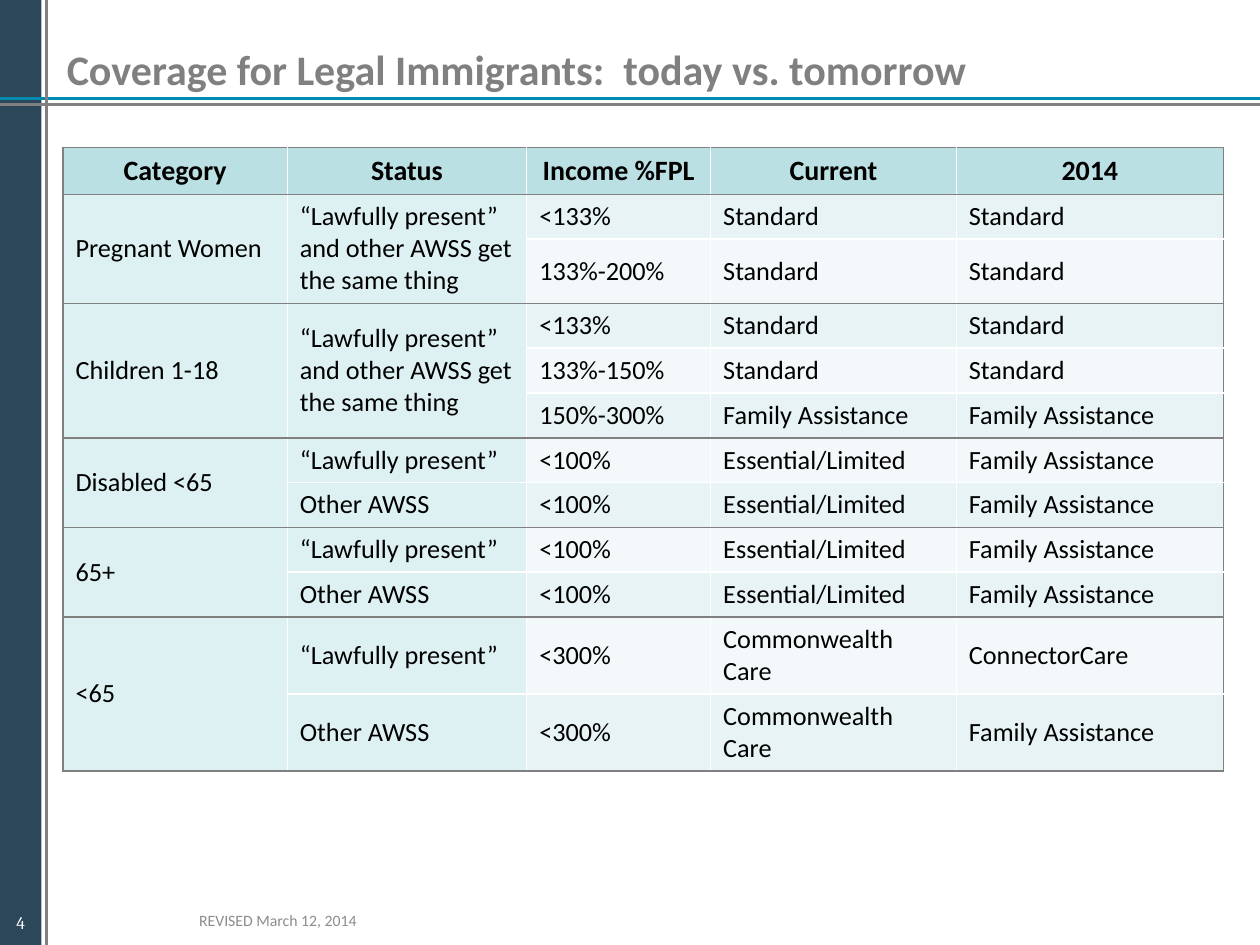
from lxml import etree
from pptx import Presentation
from pptx.dml.color import RGBColor
from pptx.enum.shapes import MSO_CONNECTOR, MSO_SHAPE
from pptx.enum.text import MSO_ANCHOR as ANCHOR, PP_ALIGN as ALIGN
from pptx.oxml.ns import qn
from pptx.util import Inches, Pt

WHITE = RGBColor(0xFF, 0xFF, 0xFF)
BLACK = RGBColor(0x00, 0x00, 0x00)
GRAY = RGBColor(0x80, 0x80, 0x80)
FOOTER_GRAY = RGBColor(0x8C, 0x8C, 0x8C)
NAVY = RGBColor(0x2C, 0x46, 0x5A)
TEAL = RGBColor(0x00, 0x8A, 0xB0)
HEADER_FILL = RGBColor(0xBB, 0xE0, 0xE3)
LABEL_FILL = RGBColor(0xDE, 0xF1, 0xF2)
BAND_FILLS = (RGBColor(0xF3, 0xF9, 0xFA), RGBColor(0xE7, 0xF3, 0xF4))

COL_WIDTHS = (1.78, 1.9, 1.46, 1.95, 2.12)
ROW_HEIGHTS = (0.35, 0.35, 0.47, *[0.35] * 7, 0.5, 0.5)
HEADERS = ("Category", "Status", "Income %FPL", "Current", "2014")
LAWFUL, OTHER = "“Lawfully present”", "Other AWSS"
FAMILY, LIMITED, CARE = "Family Assistance", "Essential/Limited", "Commonwealth Care"
GROUPS = (
    ("Pregnant Women", (
        (LAWFUL + " and other AWSS get the same thing", "<133%", "Standard", "Standard"),
        (None, "133%-200%", "Standard", "Standard"))),
    ("Children 1-18", (
        (LAWFUL + "\nand other AWSS get the same thing", "<133%", "Standard", "Standard"),
        (None, "133%-150%", "Standard", "Standard"),
        (None, "150%-300%", FAMILY, FAMILY))),
    ("Disabled <65", (
        (LAWFUL, "<100%", LIMITED, FAMILY),
        (OTHER, "<100%", LIMITED, FAMILY))),
    ("65+", (
        (LAWFUL, "<100%", LIMITED, FAMILY),
        (OTHER, "<100%", LIMITED, FAMILY))),
    ("<65", (
        (LAWFUL, "<300%", CARE, "ConnectorCare"),
        (OTHER, "<300%", CARE, FAMILY))),
)


def write(tf, text, size=15, color=BLACK, bold=False, font="Calibri", align=ALIGN.LEFT):
    """Fill a text frame with one paragraph per line of text."""
    for i, line in enumerate(text.split("\n")):
        p = tf.add_paragraph() if i else tf.paragraphs[0]
        p.alignment = align
        r = p.add_run()
        r.text = line
        r.font.name, r.font.size, r.font.bold = font, Pt(size), bold
        r.font.color.rgb = color


def add_text(s, box, text, wrap=True, inset=None, **fmt):
    """Add a vertically centred text box."""
    tf = s.shapes.add_textbox(*map(Inches, box)).text_frame
    tf.word_wrap = wrap
    tf.vertical_anchor = ANCHOR.MIDDLE
    if inset is not None:
        tf.margin_left = tf.margin_top = tf.margin_right = tf.margin_bottom = Inches(inset)
    write(tf, text, **fmt)


def add_bar(s, box, color):
    """Add a plain filled rectangle."""
    sp = s.shapes.add_shape(MSO_SHAPE.RECTANGLE, *map(Inches, box))
    sp.shadow.inherit = False
    sp.fill.solid()
    sp.fill.fore_color.rgb = color
    sp.line.fill.background()


def add_rule(s, ends, color):
    """Add a straight line without a shadow."""
    sp = s.shapes.add_connector(MSO_CONNECTOR.STRAIGHT, *map(Inches, ends))
    sp.line.color.rgb = color
    sp.line.width = Pt(1.5)
    etree.SubElement(sp._element.spPr, qn("a:effectLst"))


def add_title(s, text):
    """Place and format the title placeholder."""
    sp = s.shapes.title
    sp.left, sp.top, sp.width, sp.height = map(Inches, (0.43, 0.21, 9.57, 0.67))
    sp.text_frame.vertical_anchor = ANCHOR.MIDDLE
    write(sp.text_frame, text, size=24, color=GRAY, bold=True)


def set_borders(cell, **sides):
    """Draw one-point cell borders, given as side=color."""
    tc_pr = cell._tc.get_or_add_tcPr()
    for side, color in sides.items():
        ln = etree.SubElement(tc_pr, qn("a:ln" + side), w=str(Pt(1)))
        fill = etree.SubElement(ln, qn("a:solidFill"))
        etree.SubElement(fill, qn("a:srgbClr"), val=str(color))


def style_cell(cell, fill, edges):
    """Set borders, fill and anchor; edges names the grey sides."""
    set_borders(cell, **{side: GRAY if side in edges else WHITE for side in "LRTB"})
    cell.fill.solid()
    cell.fill.fore_color.rgb = fill
    cell.vertical_anchor = ANCHOR.MIDDLE


def side_edges(col):
    """Return the outer sides that a column touches."""
    return ("L" if col == 0 else "") + ("R" if col == len(HEADERS) - 1 else "")


def fill_group(table, top, label, rows):
    """Write one category, merging its label and any shared status."""
    last = len(rows) - 1
    for i, row in enumerate(rows):
        for col, text in enumerate((label if i == 0 else None, *row)):
            cell = table.cell(top + i, col)
            merged = col == 0 or (col == 1 and rows[-1][0] is None)
            edges = side_edges(col)
            edges += "T" if i == 0 else ""
            edges += "B" if i == last or merged else ""
            style_cell(cell, LABEL_FILL if col < 2 else BAND_FILLS[(top + i) % 2], edges)
            if merged and i == 0:
                cell.merge(table.cell(top + last, col))
            if text:
                write(cell.text_frame, text)


def add_coverage_table(s):
    """Add the coverage table with its header and category groups."""
    table = s.shapes.add_table(len(ROW_HEIGHTS), len(COL_WIDTHS), Inches(0.5), Inches(1.17),
                               Inches(sum(COL_WIDTHS)), Inches(sum(ROW_HEIGHTS))).table
    table.first_row = table.horz_banding = False
    for column, width in zip(table.columns, COL_WIDTHS):
        column.width = Inches(width)
    for row, height in zip(table.rows, ROW_HEIGHTS):
        row.height = Inches(height)
    for col, text in enumerate(HEADERS):
        cell = table.cell(0, col)
        style_cell(cell, HEADER_FILL, "TB" + side_edges(col))
        write(cell.text_frame, text, size=16, bold=True, align=ALIGN.CENTER)
    top = 1
    for label, rows in GROUPS:
        fill_group(table, top, label, rows)
        top += len(rows)


def main():
    """Build and save the slide."""
    prs = Presentation()
    prs.slide_width, prs.slide_height = Inches(10), Inches(7.5)
    s = prs.slides.add_slide(prs.slide_layouts[5])
    add_bar(s, (0, 0, 0.33, 7.5), NAVY)
    add_rule(s, (0, 0.83, 10, 0.83), GRAY)
    add_rule(s, (0, 0.78, 10, 0.78), TEAL)
    add_rule(s, (0.37, 0, 0.37, 7.5), GRAY)
    add_title(s, "Coverage for Legal Immigrants:  today vs. tomorrow")
    add_coverage_table(s)
    add_text(s, (0, 7.24, 0.33, 0.17), "4", wrap=False, inset=0,
             size=10, color=WHITE, font="Cambria", align=ALIGN.CENTER)
    add_text(s, (0.33, 7.1, 3.75, 0.4), "REVISED March 12, 2014",
             size=9, color=FOOTER_GRAY, align=ALIGN.CENTER)
    prs.save("out.pptx")


if __name__ == "__main__":
    main()
